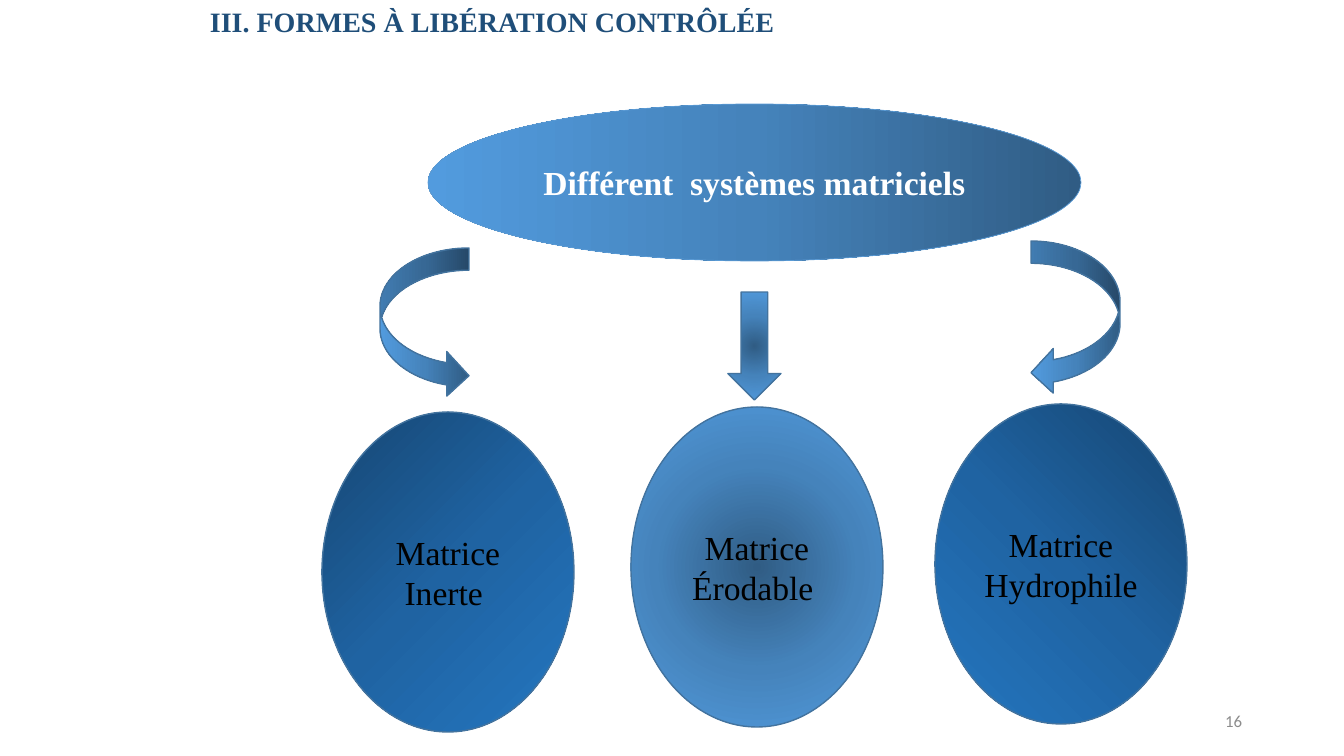
from pptx import Presentation
from pptx.dml.color import RGBColor
from pptx.enum.shapes import MSO_SHAPE
from pptx.enum.text import MSO_ANCHOR, PP_ALIGN
from pptx.oxml import parse_xml
from pptx.oxml.ns import nsdecls
from pptx.util import Inches, Pt

PX_PER_INCH = 100.8
COLORS = {
    "title": "1F4E79", "number": "8C8C8C", "white": "FFFFFF", "black": "000000",
    "edge": "43739E", "top_edge": "5B9BD5",
}
LIGHT_BLUES = ("305C84", "4583BB", "529BDE")
DEEP_BLUES = ("164672", "1F63A2", "2476C0")


def px(length):
    return round(Inches(1) * length / PX_PER_INCH)


class SlideBuilder:
    font = "Times New Roman"

    def __init__(self, slide):
        self.slide = slide

    def label(self, shape, text, size, color, bold=False, font=None,
              align=PP_ALIGN.CENTER, anchor=MSO_ANCHOR.MIDDLE):
        frame = shape.text_frame
        frame.text = text
        frame.word_wrap = True
        frame.vertical_anchor = anchor
        for paragraph in frame.paragraphs:
            paragraph.alignment = align
            for run in paragraph.runs:
                run.font.name = font or self.font
                run.font.size = Pt(size)
                run.font.bold = bold
                run.font.color.rgb = RGBColor.from_string(COLORS[color])

    def text_box(self, box, text, size, color, **style):
        shape = self.slide.shapes.add_textbox(*map(px, box))
        self.label(shape, text, size, color, **style)

    def gradient(self, shape, blues, angle):
        """Three even stops; an angle of None gives a radial fill."""
        stops = "".join(
            f'<a:gs pos="{index * 50000}"><a:srgbClr val="{blue}"/></a:gs>'
            for index, blue in enumerate(blues))
        if angle is None:
            direction = ('<a:path path="circle"><a:fillToRect l="50000" t="50000" '
                         'r="50000" b="50000"/></a:path>')
        else:
            direction = f'<a:lin ang="{angle * 60000}" scaled="0"/>'
        shape.fill.solid()
        properties = shape.element.spPr
        solid = properties.find("{*}solidFill")
        properties.replace(solid, parse_xml(
            f'<a:gradFill {nsdecls("a")} rotWithShape="1">'
            f'<a:gsLst>{stops}</a:gsLst>{direction}</a:gradFill>'))

    def shape(self, kind, box, blues, angle, edge="edge", width=1):
        shape = self.slide.shapes.add_shape(kind, *map(px, box))
        shape.shadow.inherit = False
        self.gradient(shape, blues, angle)
        shape.line.color.rgb = RGBColor.from_string(COLORS[edge])
        shape.line.width = Pt(width)
        return shape


def main():
    presentation = Presentation()
    presentation.slide_width = px(1344)
    presentation.slide_height = px(756)
    builder = SlideBuilder(presentation.slides.add_slide(presentation.slide_layouts[6]))

    # Title and page number
    builder.text_box((200, 0, 1084, 119), "III. FORMES À LIBÉRATION CONTRÔLÉE", 20, "title",
                     bold=True, align=PP_ALIGN.LEFT, anchor=MSO_ANCHOR.TOP)
    builder.text_box((950, 701, 302, 40), "16", 12, "number",
                     font="Calibri", align=PP_ALIGN.RIGHT)

    # Top ellipse
    systems = builder.shape(MSO_SHAPE.OVAL, (428, 104, 653, 157), LIGHT_BLUES, 180,
                            edge="top_edge", width=0.5)
    builder.label(systems, "Différent  systèmes matriciels", 24, "white", bold=True)

    # Arrows to the three matrices
    arrows = (
        (MSO_SHAPE.CURVED_RIGHT_ARROW, (380, 248, 89, 150), 180),
        (MSO_SHAPE.DOWN_ARROW, (728, 292, 53, 108), None),
        (MSO_SHAPE.CURVED_LEFT_ARROW, (1031, 241, 89, 154), 180),
    )
    for kind, box, angle in arrows:
        builder.shape(kind, box, LIGHT_BLUES, angle)

    # Matrices
    matrices = (
        ("Matrice\nInerte ", 322, 412, DEEP_BLUES, 45),
        ("Matrice Érodable ", 631, 407, LIGHT_BLUES, None),
        ("Matrice Hydrophile", 935, 404, DEEP_BLUES, 135),
    )
    for text, left, top, blues, angle in matrices:
        matrix = builder.shape(MSO_SHAPE.OVAL, (left, top, 252, 320), blues, angle)
        builder.label(matrix, text, 24, "black")

    presentation.save("out.pptx")


if __name__ == "__main__":
    main()
